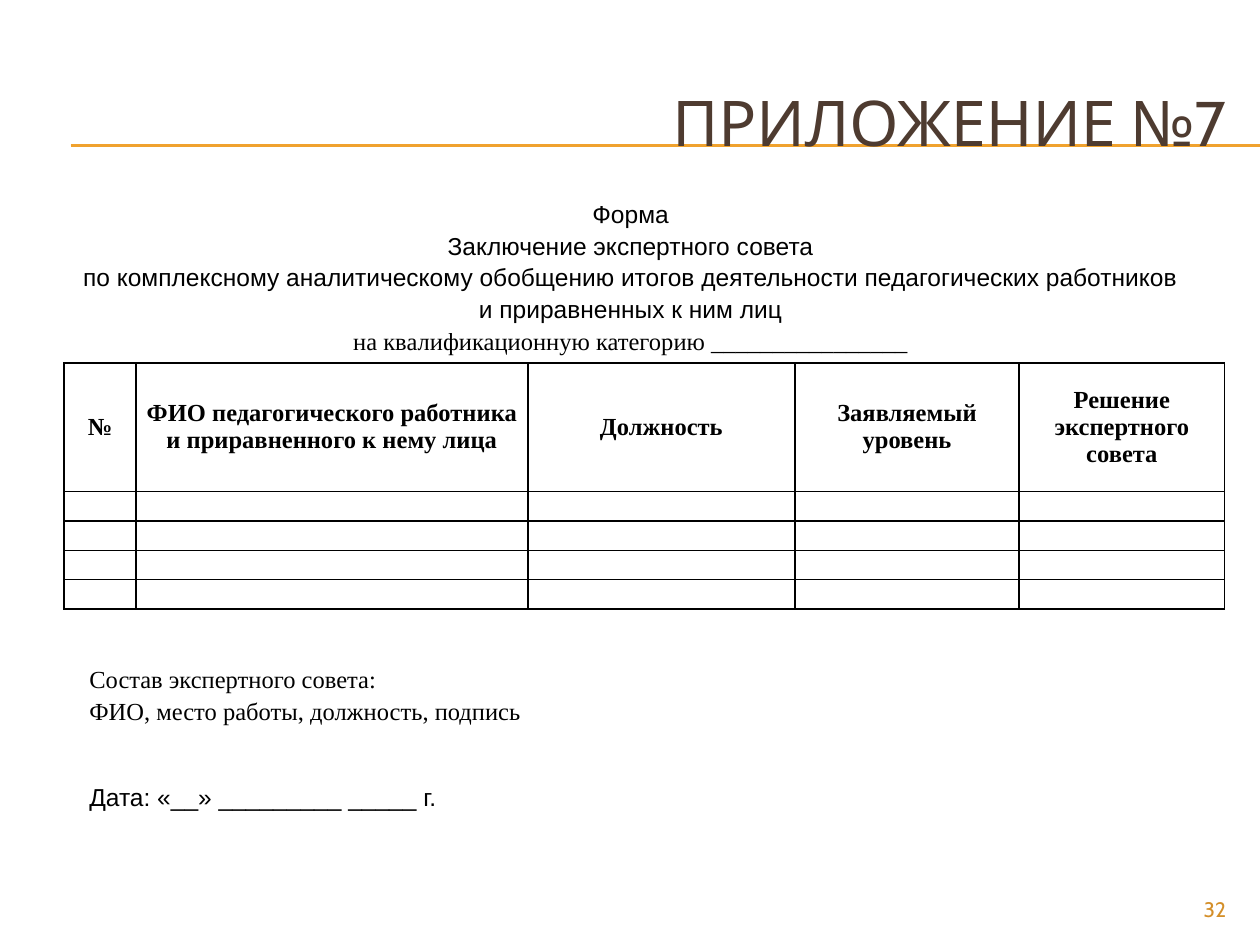
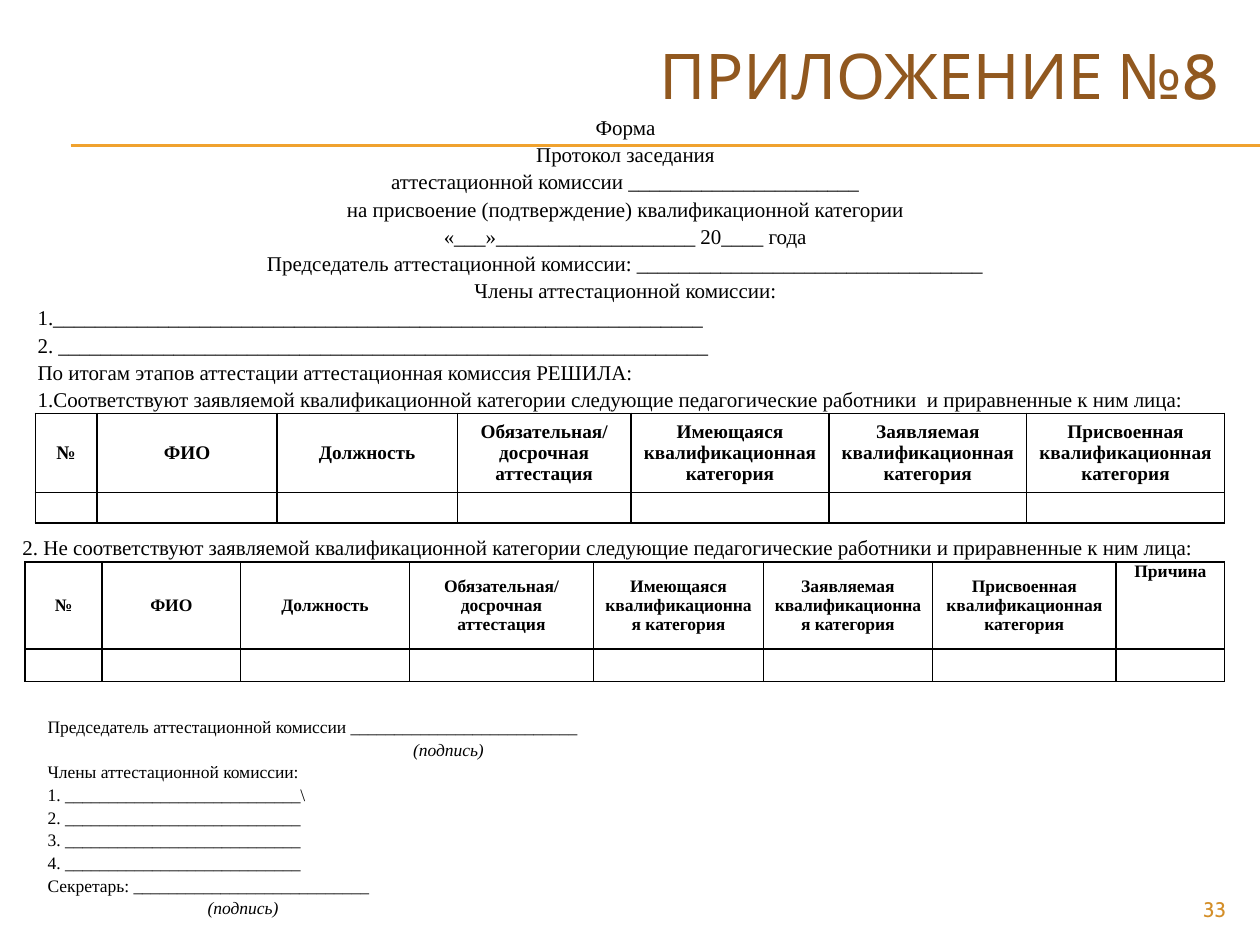
from lxml import etree
from pptx import Presentation
from pptx.dml.color import RGBColor
from pptx.enum.shapes import MSO_CONNECTOR
from pptx.enum.text import MSO_ANCHOR, PP_ALIGN
from pptx.oxml.ns import qn
from pptx.util import Inches, Pt

LEFT, CENTER, RIGHT = PP_ALIGN.LEFT, PP_ALIGN.CENTER, PP_ALIGN.RIGHT
TOP, MIDDLE = MSO_ANCHOR.TOP, MSO_ANCHOR.MIDDLE
STRAIGHT = MSO_CONNECTOR.STRAIGHT

COLORS = {
    "text": "000000",
    "rule": "F0A22E",
    "number": "D48F29",
    "title_dark": "4E3B30",
    "title_brown": "91581F",
}
SERIF, SANS, HEADING = "Times New Roman", "Arial", "Cabin"
LINE_SPACING = 1.08
BORDER_WIDTH = Pt(1)


def set_font(paragraph, name, size, color="text", bold=False, italic=False):
    font = paragraph.font
    font.name, font.size = name, Pt(size)
    font.bold, font.italic = bold, italic
    font.color.rgb = RGBColor.from_string(COLORS[color])


def add_text_box(slide, left, top, width, height):
    box = slide.shapes.add_textbox(
        Inches(left), Inches(top), Inches(width), Inches(height))
    box.text_frame.word_wrap = True
    box.text_frame.vertical_anchor = MIDDLE
    return box.text_frame


def add_label(slide, text, place, size, color):
    paragraph = add_text_box(slide, *place).paragraphs[0]
    paragraph.text = text
    paragraph.alignment = RIGHT
    set_font(paragraph, HEADING, size, color)


def add_lines(slide, place, lines, size, font=SERIF, alignment=LEFT):
    """Write one paragraph per line and return the paragraphs."""
    frame = add_text_box(slide, *place)
    for index, line in enumerate(lines):
        paragraph = frame.add_paragraph() if index else frame.paragraphs[0]
        paragraph.text = line
        paragraph.alignment = alignment
        paragraph.line_spacing = LINE_SPACING
        set_font(paragraph, font, size)
    return frame.paragraphs


def indent(paragraph, distance):
    properties = paragraph._p.get_or_add_pPr()
    properties.set("marL", str(Inches(distance)))
    properties.set("indent", "0")


def number_automatically(paragraph):
    properties = paragraph._p.get_or_add_pPr()
    numbering = etree.Element(qn("a:buAutoNum"), type="arabicPeriod")
    properties.find(qn("a:defRPr")).addprevious(numbering)


def add_rule(slide, y):
    rule = slide.shapes.add_connector(
        STRAIGHT, Inches(0.56), Inches(y), Inches(10), Inches(y))
    rule.line.color.rgb = RGBColor.from_string(COLORS["rule"])
    rule.line.width = Pt(0.75)
    etree.SubElement(rule._element.spPr, qn("a:effectLst"))


def add_form_slide(presentation, title, title_place, title_color, number):
    """Add a slide with the double rule, the title and the page number."""
    slide = presentation.slides.add_slide(presentation.slide_layouts[6])
    for y in (1.15, 1.16):
        add_rule(slide, y)
    add_label(slide, title, title_place, 36, title_color)
    add_label(slide, number, (9, 7.08, 0.83, 0.27), 12, "number")
    return slide


def set_borders(cell):
    properties = cell._tc.get_or_add_tcPr()
    for position, side in enumerate(("a:lnL", "a:lnR", "a:lnT", "a:lnB")):
        border = etree.Element(qn(side), w=str(BORDER_WIDTH))
        fill = etree.SubElement(border, qn("a:solidFill"))
        etree.SubElement(fill, qn("a:srgbClr"), val=COLORS["text"])
        properties.insert(position, border)


def add_form_table(slide, left, top, widths, heights, headers, size):
    """Add a bordered table with a header row and empty rows to fill in."""
    table = slide.shapes.add_table(
        len(heights), len(widths), Inches(left), Inches(top),
        Inches(sum(widths)), Inches(sum(heights))).table
    table.first_row = table.horz_banding = False
    for column, width in zip(table.columns, widths):
        column.width = Inches(width)
    for row, height in zip(table.rows, heights):
        row.height = Inches(height)
    for cell, header in zip(table.rows[0].cells, headers):
        cell.text = header
    for cell in table.iter_cells():
        cell.margin_left = cell.margin_right = Inches(0.07)
        cell.margin_top = cell.margin_bottom = 0
        cell.vertical_anchor = MIDDLE
        cell.fill.background()
        set_borders(cell)
        paragraph = cell.text_frame.paragraphs[0]
        paragraph.alignment = CENTER
        set_font(paragraph, SERIF, size, bold=True)
    return table


def build_council_form(presentation):
    slide = add_form_slide(presentation, "ПРИЛОЖЕНИЕ №7",
                           (0.33, 0.5, 9.5, 0.92), "title_dark", "32")
    heading = add_lines(slide, (0.5, 1.55, 9.01, 1.28), [
        "Форма",
        "Заключение экспертного совета",
        "по комплексному аналитическому обобщению итогов деятельности педагогических работников",
        "и приравненных к ним лиц",
        "на квалификационную категорию ________________",
    ], 14, SANS, CENTER)
    set_font(heading[-1], SERIF, 14)

    add_form_table(
        slide, 0.51, 2.88, [0.57, 3.11, 2.12, 1.78, 1.63],
        [1.02] + [0.22] * 4,
        ["№", "ФИО педагогического работника и приравненного к нему лица",
         "Должность", "Заявляемый уровень", "Решение экспертного совета"], 14)

    members = add_lines(slide, (0.12, 5.22, 6.22, 1.25), [
        "Состав экспертного совета:",
        "ФИО, место работы, должность, подпись",
        "Дата: «__» _________ _____ г.",
    ], 14)
    for paragraph in members:
        indent(paragraph, 0.49)
    date = members[-1]
    date.space_before = Pt(31)
    set_font(date, SANS, 14)


def build_commission_protocol(presentation):
    slide = add_form_slide(presentation, "ПРИЛОЖЕНИЕ №8",
                           (0.28, 0.13, 9.5, 0.92), "title_brown", "33")
    protocol = add_lines(slide, (0.2, 0.92, 9.53, 2.32), [
        "Форма",
        "Протокол заседания",
        "аттестационной комиссии ______________________",
        "на присвоение (подтверждение) квалификационной категории",
        "«___»___________________ 20____ года",
        "Председатель аттестационной комиссии: " + "_" * 33,
        "Члены аттестационной комиссии:",
        "1." + "_" * 62,
        "2. " + "_" * 62,
        "По итогам этапов аттестации аттестационная комиссия РЕШИЛА:",
        "Соответствуют заявляемой квалификационной категории следующие "
        "педагогические работники  и приравненные к ним лица:",
    ], 12)
    for paragraph in protocol[:7]:
        paragraph.alignment = CENTER
    number_automatically(protocol[-1])

    categories = [f"{kind} квалификационная категория"
                  for kind in ("Имеющаяся", "Заявляемая", "Присвоенная")]
    add_form_table(
        slide, 0.28, 3.28, [0.49, 1.43, 1.43, 1.38] + [1.57] * 3, [0.63, 0.24],
        ["№", "ФИО", "Должность", "Обязательная/ досрочная аттестация",
         *categories], 11)

    add_lines(slide, (0.08, 4.17, 9.92, 0.33), [
        "2. Не соответствуют заявляемой квалификационной категории следующие "
        "педагогические работники и приравненные к ним лица:"], 12)
    rejected = add_form_table(
        slide, 0.2, 4.46, [0.61, 1.1, 1.34, 1.46, 1.35, 1.34, 1.46, 0.86],
        [0.69, 0.26],
        ["№", "ФИО", "Должность", "Обязательная/досрочная аттестация",
         *categories, "Причина"], 10)
    rejected.cell(0, 7).vertical_anchor = TOP

    blank = "_" * 27
    signatures = add_lines(slide, (0.28, 5.67, 8.5, 1.62), [
        "Председатель аттестационной комиссии " + "_" * 26,
        "(подпись)",
        "Члены аттестационной комиссии:",
        f"1. {blank}\\",
        *[f"{number}. {blank}" for number in (2, 3, 4)],
        f"Секретарь: {blank}",
        "(подпись)",
    ], 10)
    for position, distance in ((1, 2.9), (8, 1.27)):
        indent(signatures[position], distance)
        signatures[position].font.italic = True


def main():
    presentation = Presentation()
    presentation.slide_width = Inches(10)
    presentation.slide_height = Inches(7.5)
    build_council_form(presentation)
    build_commission_protocol(presentation)
    presentation.save("out.pptx")


if __name__ == "__main__":
    main()
